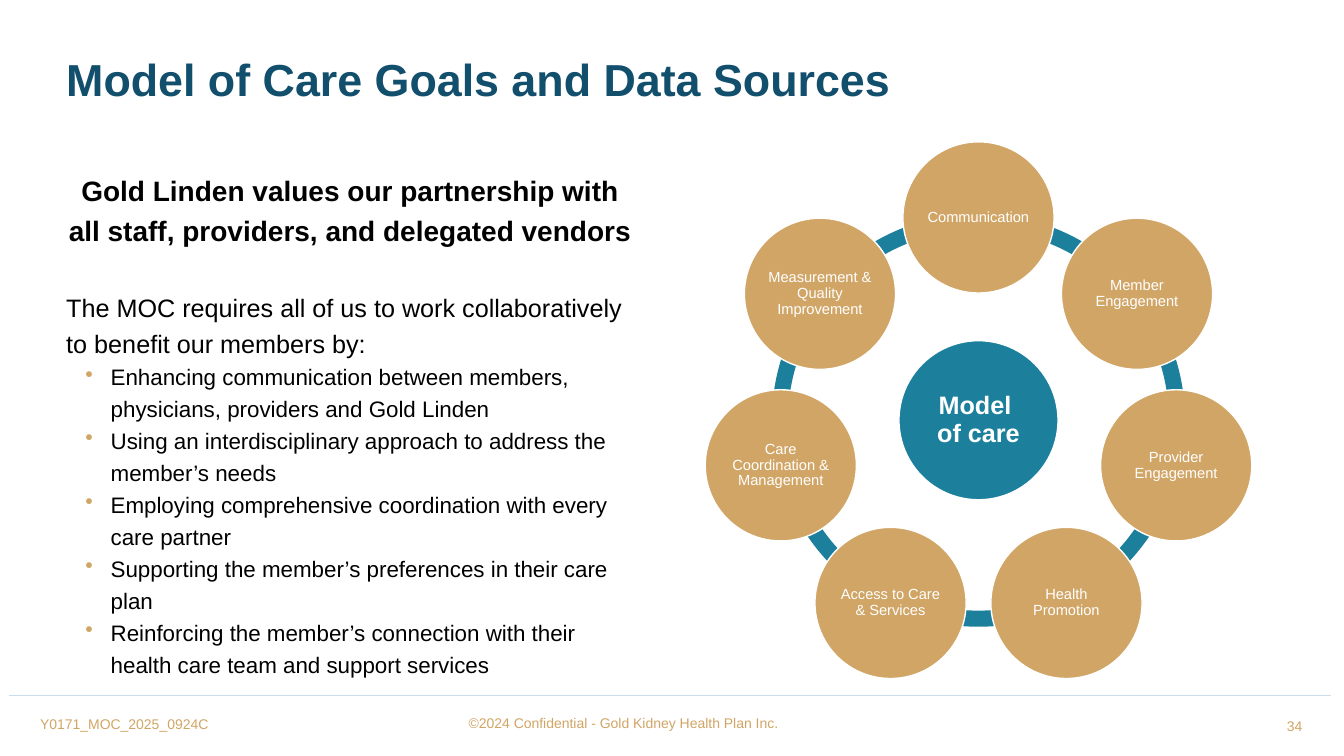
from math import cos, radians, sin
from typing import NamedTuple

from lxml import etree
from pptx import Presentation, util as u
from pptx.dml.color import RGBColor
from pptx.enum import shapes, text
from pptx.oxml.ns import qn

GOLD, TEAL, NAVY = "D1A565", "1C809D", "124F6D"
BLACK, WHITE, PALE = "000000", "FFFFFF", "CCDDEA"
MID_X, MID_Y, ORBIT = 24.66, 10.59, 5.11
NODE, HUB, RING = 3.81, 4.01, 10.41

LEFT, MID, RIGHT = text.PP_ALIGN.LEFT, text.PP_ALIGN.CENTER, text.PP_ALIGN.RIGHT
TOP, CENTRE = text.MSO_ANCHOR.TOP, text.MSO_ANCHOR.MIDDLE


class Box(NamedTuple):
    x: float
    y: float
    w: float
    h: float
    words: str
    size: float
    color: str = GOLD
    bold: bool = False
    align: text.PP_ALIGN = LEFT
    anchor: text.MSO_ANCHOR = TOP
    line: float = 1.0
    wrap: bool = True


class Disc(NamedTuple):
    x: float
    y: float
    width: float
    fill: str
    words: str
    size: float
    bold: bool = False


BOXES = [
    Box(1.42, 1.32, 28.3, 1.7, "Model of Care Goals and Data Sources", 32, NAVY, True, line=0.9),
    Box(26.64, 17.81, 6.43, 0.97, "34", 10, align=RIGHT, anchor=CENTRE),
    Box(11.56, 17.86, 10.59, 0.69, "©2024 Confidential - Gold Kidney Health Plan Inc.", 10, anchor=CENTRE),
    Box(0.76, 17.91, 4.78, 0.69, "Y0171_MOC_2025_0924C", 10, wrap=False),
]
GOALS = [
    "Enhancing communication between members, physicians, providers and Gold Linden",
    "Using an interdisciplinary approach to address the member’s needs",
    "Employing comprehensive coordination with every care partner",
    "Supporting the member’s preferences in their care plan",
    "Reinforcing the member’s connection with their health care team and support services",
]
TOPICS = [
    "Communication",
    "Member Engagement",
    "Provider Engagement",
    "Health Promotion",
    "Access to Care & Services",
    "Care Coordination & Management",
    "Measurement & Quality Improvement",
]
STEP = 360 / len(TOPICS)


def paint(code: str) -> RGBColor:
    return RGBColor.from_string(code)


def write(frame, words: str, *, size: float, color: str = BLACK, bold: bool = False,
          align=LEFT, line: float = 1.0, after: float = 0, bullet: str = "") -> None:
    para = frame.paragraphs[0]
    if para.text:
        para = frame.add_paragraph()
    if bullet:
        props = para._p.get_or_add_pPr()
        props.set("marL", str(u.Cm(1.12)))
        props.set("indent", str(-u.Cm(0.64)))
        tint = etree.SubElement(props, qn("a:buClr"))
        etree.SubElement(tint, qn("a:srgbClr"), val=GOLD)
        etree.SubElement(props, qn("a:buChar"), char=bullet)
    para.text = words
    para.alignment, para.line_spacing = align, line
    para.space_after = u.Pt(after)
    font = para.font
    font.name, font.size, font.bold = "Arial", u.Pt(size), bold
    font.color.rgb = paint(color)


def add_frame(slide, x: float, y: float, w: float, h: float):
    frame = slide.shapes.add_textbox(u.Cm(x), u.Cm(y), u.Cm(w), u.Cm(h)).text_frame
    frame.word_wrap = True
    return frame


def add_box(slide, box: Box) -> None:
    frame = add_frame(slide, box.x, box.y, box.w, box.h)
    frame.word_wrap, frame.vertical_anchor = box.wrap, box.anchor
    write(frame, box.words, size=box.size, color=box.color, bold=box.bold,
          align=box.align, line=box.line)


def add_round(slide, kind, x: float, y: float, width: float, fill: str):
    shape = slide.shapes.add_shape(kind, u.Cm(x - width / 2), u.Cm(y - width / 2),
                                   u.Cm(width), u.Cm(width))
    shape.shadow.inherit = False
    shape.fill.solid()
    shape.fill.fore_color.rgb = paint(fill)
    shape.line.fill.background()
    return shape


def add_arc(slide, start: float) -> None:
    arc = add_round(slide, shapes.MSO_SHAPE.BLOCK_ARC, MID_X, MID_Y, RING, TEAL)
    for i, angle in enumerate((start, start + STEP)):
        arc.adjustments[i] = angle % 360 * 0.6
    arc.adjustments[2] = 0.039


def add_disc(slide, disc: Disc) -> None:
    shape = add_round(slide, shapes.MSO_SHAPE.OVAL, disc.x, disc.y, disc.width, disc.fill)
    shape.line.color.rgb = paint(WHITE)
    shape.line.width = u.Pt(1)
    frame = shape.text_frame
    frame.word_wrap, frame.vertical_anchor = True, CENTRE
    frame.margin_left = frame.margin_right = frame.margin_top = frame.margin_bottom = 0
    write(frame, disc.words, size=disc.size, color=WHITE, bold=disc.bold, align=MID, line=0.9)


def add_rule(slide) -> None:
    rule = slide.shapes.add_connector(shapes.MSO_CONNECTOR.STRAIGHT, u.Cm(0.23), u.Cm(17.53),
                                      u.Cm(33.55), u.Cm(17.53))
    rule.line.color.rgb = paint(PALE)
    rule.line.width = u.Pt(0.5)
    etree.SubElement(rule._element.spPr, qn("a:effectLst"))


def add_goals(slide) -> None:
    frame = add_frame(slide, 1.42, 4.09, 14.81, 11.18)
    write(frame, "Gold Linden values our partnership with all staff, providers, and delegated vendors",
          size=20, bold=True, align=MID, line=1.19, after=28)
    write(frame, "The MOC requires all of us to work collaboratively to benefit our members by:",
          size=18, line=1.19)
    for goal in GOALS:
        write(frame, goal, size=16, line=1.19, bullet="•")


def add_wheel(slide) -> None:
    for i in range(len(TOPICS)):
        add_arc(slide, 270 + i * STEP)
    add_disc(slide, Disc(MID_X, MID_Y, HUB, TEAL, "Model \vof care", 18, True))
    for i, topic in enumerate(TOPICS):
        turn = radians(i * STEP)
        x, y = MID_X + ORBIT * sin(turn), MID_Y - ORBIT * cos(turn)
        add_disc(slide, Disc(x, y, NODE, GOLD, topic, 10.5))


def main() -> None:
    deck = Presentation()
    deck.slide_width, deck.slide_height = u.Cm(33.87), u.Cm(19.05)
    slide = deck.slides.add_slide(deck.slide_layouts[6])
    add_rule(slide)
    for box in BOXES:
        add_box(slide, box)
    add_goals(slide)
    add_wheel(slide)
    deck.save("out.pptx")


if __name__ == "__main__":
    main()
